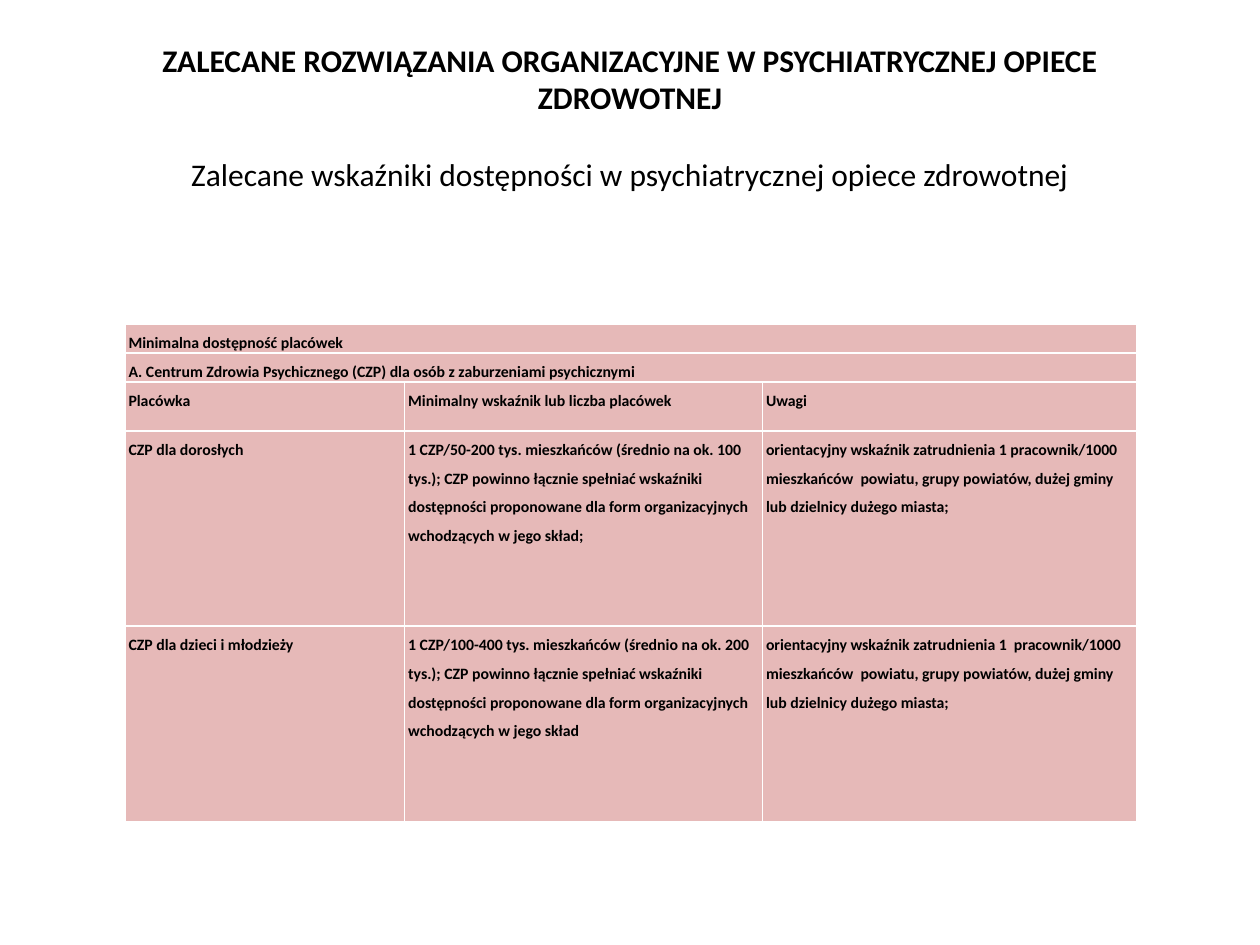
import lxml.etree
import pptx
import pptx.dml.color
import pptx.enum.text
import pptx.oxml.ns
import pptx.util


def colour(hex_string):
    return pptx.dml.color.RGBColor.from_string(hex_string)


class SlideBuilder:
    """Holds the style and the current slide, placing elements by shares of its size."""

    font = "Calibri"
    ink = "000000"
    cell_fill = "E6B9B8"
    border = "FFFFFF"

    def __init__(self, deck):
        self.width, self.height = deck.slide_width, deck.slide_height
        self.slide = deck.slides.add_slide(deck.slide_layouts[6])

    def across(self, share):
        return round(self.width * share)

    def down(self, share):
        return round(self.height * share)

    def format_runs(self, paragraph, size, bold):
        for run in paragraph.runs:
            run.font.name = self.font
            run.font.size = pptx.util.Pt(size)
            run.font.bold = bold
            run.font.color.rgb = colour(self.ink)

    def heading(self, left, top, width, height, title, subtitle, size=18):
        box = self.slide.shapes.add_textbox(
            self.across(left), self.down(top), self.across(width), self.down(height))
        frame = box.text_frame
        frame.word_wrap = True
        frame.vertical_anchor = pptx.enum.text.MSO_ANCHOR.MIDDLE
        frame.text = f"{title}\n{subtitle}"
        for paragraph, bold in zip(frame.paragraphs, (True, False)):
            paragraph.alignment = pptx.enum.text.PP_ALIGN.CENTER
            self.format_runs(paragraph, size, bold)
        frame.paragraphs[1].space_before = pptx.util.Pt(22)

    def outline(self, cell):
        properties = cell._tc.get_or_add_tcPr()
        for side in ("a:lnL", "a:lnR", "a:lnT", "a:lnB"):
            line = lxml.etree.SubElement(
                properties, pptx.oxml.ns.qn(side), w=str(pptx.util.Pt(1)))
            fill = lxml.etree.SubElement(line, pptx.oxml.ns.qn("a:solidFill"))
            lxml.etree.SubElement(fill, pptx.oxml.ns.qn("a:srgbClr"), val=self.border)

    def fill_cell(self, cell, text, size):
        self.outline(cell)
        cell.fill.solid()
        cell.fill.fore_color.rgb = colour(self.cell_fill)
        cell.margin_left = cell.margin_right = pptx.util.Inches(0.03)
        cell.margin_top = cell.margin_bottom = 0
        cell.text_frame.text = text
        for paragraph in cell.text_frame.paragraphs:
            paragraph.line_spacing = 1.5
            paragraph.font.size = pptx.util.Pt(size)
            self.format_runs(paragraph, size, True)

    def table(self, left, top, columns, row_heights, rows, size=9):
        table = self.slide.shapes.add_table(
            len(rows), len(columns), self.across(left), self.down(top),
            self.across(sum(columns)), self.down(sum(row_heights))).table
        table.first_row = table.horz_banding = False
        for column, share in zip(table.columns, columns):
            column.width = self.across(share)
        for index, (texts, share) in enumerate(zip(rows, row_heights)):
            table.rows[index].height = self.down(share)
            padded = texts + [""] * (len(columns) - len(texts))
            for position, text in enumerate(padded):
                self.fill_cell(table.cell(index, position), text, size)
            if len(texts) == 1:
                table.cell(index, 0).merge(table.cell(index, len(columns) - 1))


def main():
    deck = pptx.Presentation()
    deck.slide_width, deck.slide_height = pptx.util.Inches(10), pptx.util.Inches(7.5)
    builder = SlideBuilder(deck)
    builder.heading(
        0.05, 0.04, 0.9, 1 / 6,
        "ZALECANE ROZWIĄZANIA ORGANIZACYJNE W PSYCHIATRYCZNEJ OPIECE ZDROWOTNEJ",
        "Zalecane wskaźniki dostępności w psychiatrycznej opiece zdrowotnej")

    requirement = ("CZP powinno łącznie spełniać wskaźniki dostępności proponowane "
                   "dla form organizacyjnych wchodzących w jego skład")
    area = "mieszkańców  powiatu, grupy powiatów, dużej gminy lub dzielnicy dużego miasta;"
    availability = [
        ["Minimalna dostępność placówek"],
        ["A. Centrum Zdrowia Psychicznego (CZP) dla osób z zaburzeniami psychicznymi"],
        ["Placówka", "Minimalny wskaźnik lub liczba placówek", "Uwagi"],
        ["CZP dla dorosłych",
         f"1 CZP/50-200 tys. mieszkańców (średnio na ok. 100 tys.); {requirement};",
         f"orientacyjny wskaźnik zatrudnienia 1 pracownik/1000 {area}"],
        ["CZP dla dzieci i młodzieży",
         f"1 CZP/100-400 tys. mieszkańców (średnio na ok. 200 tys.); {requirement}",
         f"orientacyjny wskaźnik zatrudnienia 1  pracownik/1000 {area}"],
    ]
    heights = [inches / 7.5 for inches in (0.23, 0.23, 0.39, 1.55, 1.55)]
    widths = [inches / 10 for inches in (2.22, 2.84, 2.97)]
    builder.table(0.099, 2.57 / 7.5, widths, heights, availability)
    deck.save("out.pptx")


if __name__ == "__main__":
    main()
